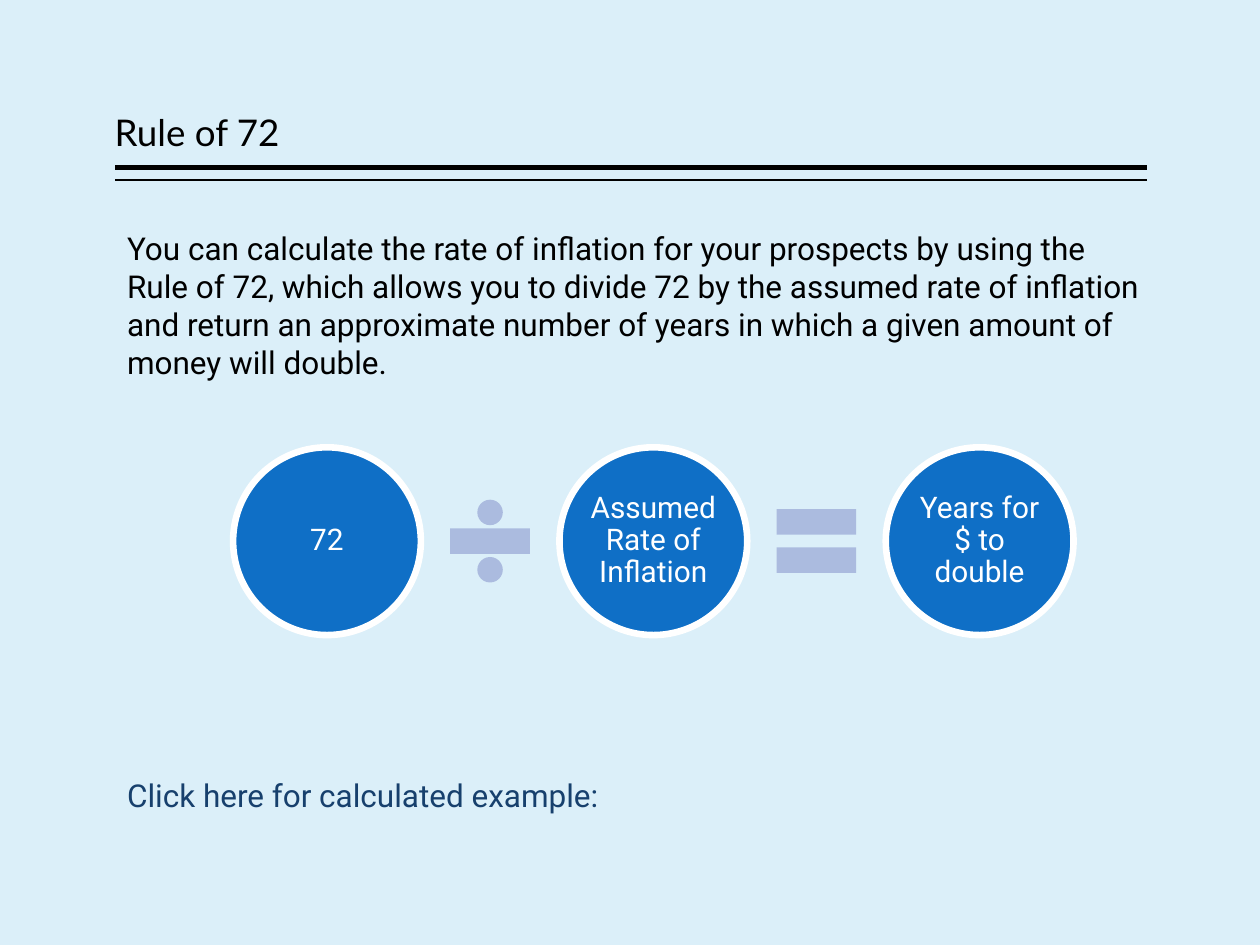
from lxml.etree import SubElement
from pptx import Presentation
from pptx.dml.color import RGBColor
from pptx.enum.shapes import MSO_CONNECTOR, MSO_SHAPE
from pptx.enum.text import MSO_ANCHOR, PP_ALIGN
from pptx.oxml.ns import qn
from pptx.util import Inches, Pt

BACKGROUND = RGBColor(0xDB, 0xEF, 0xF9)
BLACK = RGBColor(0, 0, 0)
WHITE = RGBColor(0xFF, 0xFF, 0xFF)
BLUE = RGBColor(0x0F, 0x6F, 0xC6)
LAVENDER = RGBColor(0xAB, 0xBB, 0xDF)
NAVY = RGBColor(0x17, 0x40, 0x6D)

TITLE = "Rule of 72"
BODY_TEXTS = [
    ("You can calculate the rate of inflation for your prospects by using the "
     "Rule of 72, which allows you to divide 72 by the assumed rate of inflation "
     "and return an approximate number of years in which a given amount of "
     "money will double.", (0.91, 1.77, 8.28, 1.3), BLACK),
    ("Click here for calculated example:", (0.91, 6.11, 5.52, 0.71), NAVY),
]
RULES = [(1.33, 3), (1.43, 1)]
TERMS = ["72", "Assumed Rate of Inflation", "Years for $ to double"]
OPERATORS = [MSO_SHAPE.MATH_DIVIDE, MSO_SHAPE.MATH_EQUAL]

LEFT, RIGHT = 0.91, 9.1
EQUATION_LEFT, EQUATION_MIDDLE = 1.85, 4.295
CIRCLE, OPERATOR, GAP = 1.49, 0.86, 0.12
STEP = CIRCLE + OPERATOR + 2 * GAP


def write(shape, text, size=18, font="Roboto", color=BLACK, align=PP_ALIGN.LEFT,
          anchor=MSO_ANCHOR.TOP, insets=(0.1, 0.05), spacing=1.0):
    frame = shape.text_frame
    frame.word_wrap = True
    frame.vertical_anchor = anchor
    frame.margin_left = frame.margin_right = Inches(insets[0])
    frame.margin_top = frame.margin_bottom = Inches(insets[1])
    paragraph = frame.paragraphs[0]
    paragraph.alignment = align
    paragraph.line_spacing = spacing
    run = paragraph.add_run()
    run.text = text
    run.font.name = font
    run.font.size = Pt(size)
    run.font.color.rgb = color


def add_symbol(slide, kind, left, size, fill):
    top = EQUATION_MIDDLE - size / 2
    shape = slide.shapes.add_shape(
        kind, Inches(left), Inches(top), Inches(size), Inches(size))
    shape.shadow.inherit = False
    shape.fill.solid()
    shape.fill.fore_color.rgb = fill
    shape.line.fill.background()
    return shape


def add_rule(slide, top, width):
    rule = slide.shapes.add_connector(
        MSO_CONNECTOR.STRAIGHT, Inches(RIGHT), Inches(top), Inches(LEFT), Inches(top))
    rule.line.color.rgb = BLACK
    rule.line.width = Pt(width)
    SubElement(rule._element.spPr, qn("a:effectLst"))


def main():
    presentation = Presentation()
    presentation.slide_width, presentation.slide_height = Inches(10), Inches(7.5)
    slide = presentation.slides.add_slide(presentation.slide_layouts[5])
    slide.background.fill.solid()
    slide.background.fill.fore_color.rgb = BACKGROUND

    for top, width in RULES:
        add_rule(slide, top, width)

    title = slide.shapes.title
    title.left, title.top = Inches(LEFT), Inches(0.08)
    title.width, title.height = Inches(RIGHT - LEFT), Inches(1.2)
    write(title, TITLE, size=21, font="Lato", anchor=MSO_ANCHOR.BOTTOM,
          insets=(0, 0.05), spacing=0.9)

    for text, box, color in BODY_TEXTS:
        write(slide.shapes.add_textbox(*map(Inches, box)), text, color=color)

    for index, term in enumerate(TERMS):
        circle = add_symbol(slide, MSO_SHAPE.OVAL, EQUATION_LEFT + index * STEP, CIRCLE, BLUE)
        circle.line.color.rgb = WHITE
        circle.line.width = Pt(3.78)
        write(circle, term, size=17, color=WHITE, align=PP_ALIGN.CENTER,
              anchor=MSO_ANCHOR.MIDDLE, insets=(0.02, 0.02), spacing=0.9)

    for index, kind in enumerate(OPERATORS):
        left = EQUATION_LEFT + index * STEP + CIRCLE + GAP
        add_symbol(slide, kind, left, OPERATOR, LAVENDER)

    presentation.save("out.pptx")


if __name__ == "__main__":
    main()
